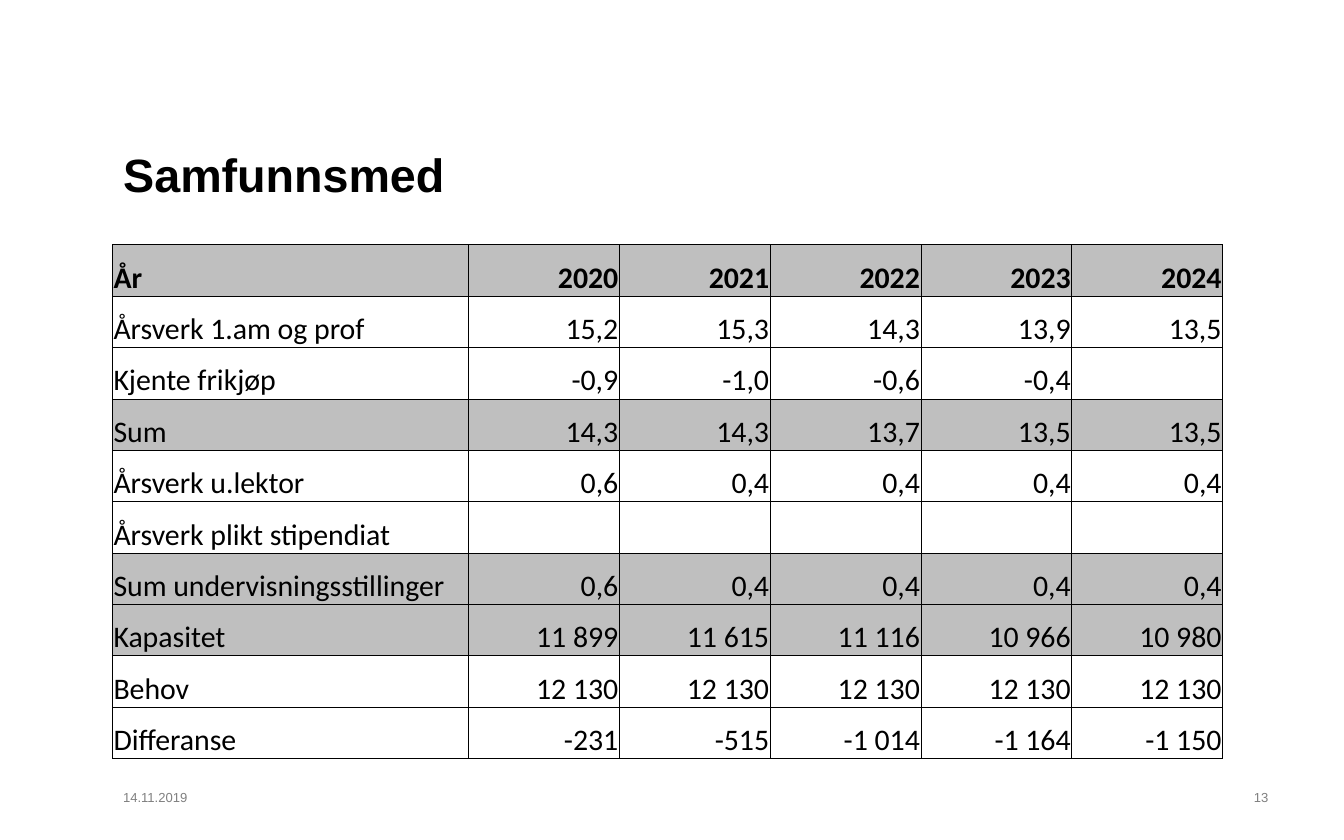
import pptx
import pptx.dml.color
import pptx.enum.text
import pptx.oxml
import pptx.oxml.ns
import pptx.util

Pt = pptx.util.Pt
ALIGN = pptx.enum.text.PP_ALIGN
ANCHOR = pptx.enum.text.MSO_ANCHOR


def colour(hex_value):
    return pptx.dml.color.RGBColor.from_string(hex_value)


def write(frame, text, align, hex_value, formats):
    para = frame.paragraphs[0]
    para.alignment = align
    span = para.add_run()
    span.text = text
    span.font.color.rgb = colour(hex_value)
    for name, value in formats.items():
        setattr(span.font, name, value)


deck = pptx.Presentation()
deck.slide_width, deck.slide_height = Pt(720), Pt(450)
page = deck.slides.add_slide(deck.slide_layouts[5])
box_format = {
    "margin_left": Pt(6), "margin_right": Pt(6),
    "margin_top": Pt(3), "margin_bottom": Pt(3),
    "word_wrap": True, "auto_size": pptx.enum.text.MSO_AUTO_SIZE.NONE,
}

# Title
title = page.shapes.title
title.left, title.top, title.width, title.height = Pt(60), Pt(55.5), Pt(623.5), Pt(75)
for name, value in box_format.items():
    setattr(title.text_frame, name, value)
title.text_frame.vertical_anchor = ANCHOR.MIDDLE
write(title.text_frame, "Samfunnsmed", ALIGN.LEFT, "000000",
      {"name": "Arial", "size": Pt(25), "bold": True})

# Staffing table
rows = [
    ["År", "2020", "2021", "2022", "2023", "2024"],
    ["Årsverk 1.am og prof", "15,2", "15,3", "14,3", "13,9", "13,5"],
    ["Kjente frikjøp", "-0,9", "-1,0", "-0,6", "-0,4", ""],
    ["Sum", "14,3", "14,3", "13,7", "13,5", "13,5"],
    ["Årsverk u.lektor", "0,6", "0,4", "0,4", "0,4", "0,4"],
    ["Årsverk plikt stipendiat", "", "", "", "", ""],
    ["Sum undervisningsstillinger", "0,6", "0,4", "0,4", "0,4", "0,4"],
    ["Kapasitet", "11 899", "11 615", "11 116", "10 966", "10 980"],
    ["Behov", "12 130", "12 130", "12 130", "12 130", "12 130"],
    ["Differanse", "-231", "-515", "-1 014", "-1 164", "-1 150"],
]
shaded_rows = {0, 3, 6, 7}
label_width, year_width, row_height = 190.8, 80.8, 27.55
cell_format = {
    "margin_left": Pt(0.6), "margin_right": Pt(0.6),
    "margin_top": Pt(0.6), "margin_bottom": Pt(0),
    "vertical_anchor": ANCHOR.BOTTOM,
}
table = page.shapes.add_table(
    len(rows), len(rows[0]), Pt(60.25), Pt(131.2),
    Pt(label_width + 5 * year_width), Pt(row_height * len(rows))).table
table.horz_banding = False
for column_index, column in enumerate(table.columns):
    column.width = Pt(year_width if column_index else label_width)

for row_index, values in enumerate(rows):
    table.rows[row_index].height = Pt(row_height)
    for column_index, text in enumerate(values):
        cell = table.cell(row_index, column_index)
        for name, value in cell_format.items():
            setattr(cell, name, value)
        if text:
            write(cell.text_frame, text, ALIGN.RIGHT if column_index else ALIGN.LEFT, "000000",
                  {"name": "Calibri", "size": Pt(16), "bold": row_index == 0})

        # Borders come before the fill in the cell properties
        properties = cell._tc.get_or_add_tcPr()
        for side in ("lnL", "lnR", "lnT", "lnB"):
            properties.append(pptx.oxml.parse_xml(
                f'<a:{side} {pptx.oxml.ns.nsdecls("a")} w="{Pt(0.5)}"><a:solidFill>'
                f'<a:srgbClr val="000000"/></a:solidFill></a:{side}>'))
        if row_index in shaded_rows:
            cell.fill.solid()
            cell.fill.fore_color.rgb = colour("BFBFBF")
        else:
            cell.fill.background()

# Date and page number
for text, left, width, align in [
    ("14.11.2019", 60, 150, ALIGN.LEFT),
    ("13", 631.5, 54, ALIGN.RIGHT),
]:
    box = page.shapes.add_textbox(Pt(left), Pt(420), Pt(width), Pt(30))
    for name, value in box_format.items():
        setattr(box.text_frame, name, value)
    write(box.text_frame, text, align, "808080", {"name": "Arial", "size": Pt(7)})

deck.save("out.pptx")
